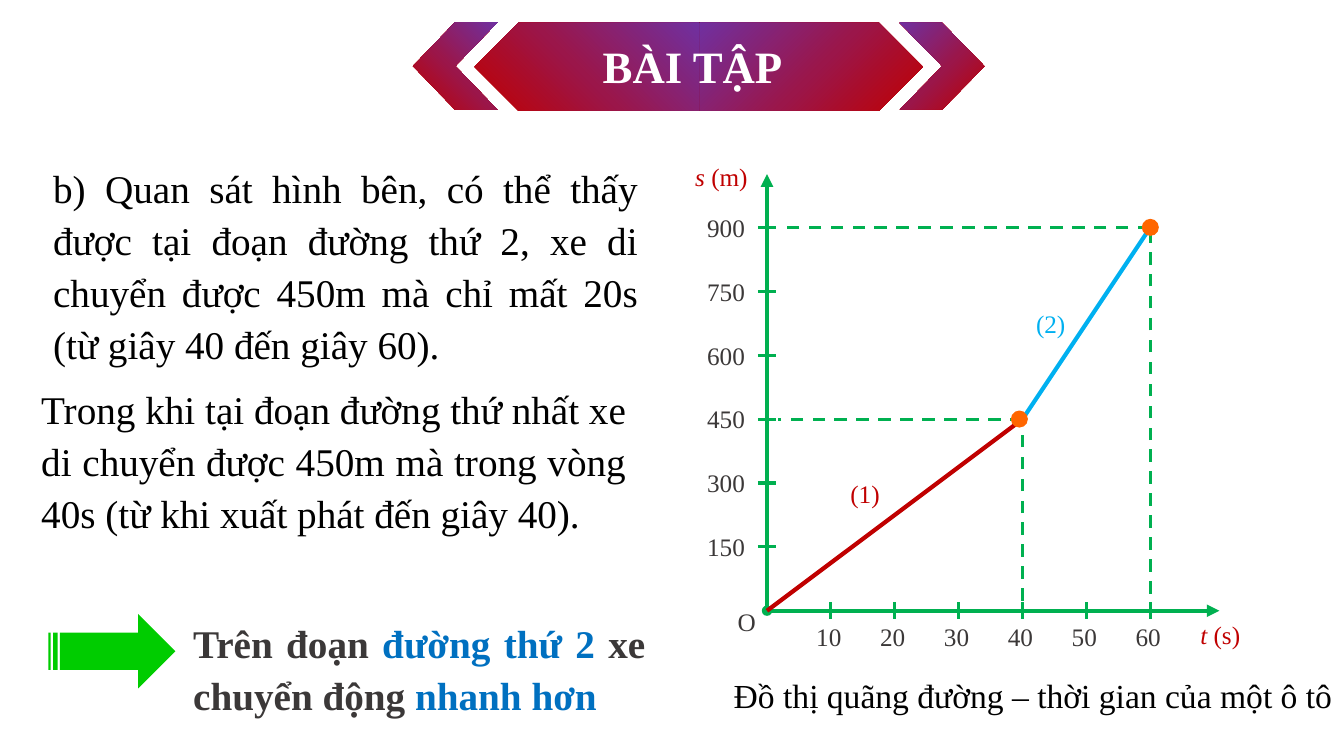
from pptx import Presentation
from pptx.dml.color import RGBColor
from pptx.enum.dml import MSO_LINE
from pptx.enum.shapes import MSO_CONNECTOR, MSO_SHAPE
from pptx.enum.text import PP_ALIGN
from pptx.oxml.ns import qn
from pptx.util import Cm, Pt
from copy import deepcopy
from lxml.etree import SubElement

FONT = "Times New Roman"
RED, GREEN, SKY, ORANGE = "C00000", "00B050", "00B0F0", "FF6600"
BLUE, GREY, BLACK, WHITE = "0070C0", "3B3838", "000000", "FFFFFF"
LIME = "00CC00"
BLEND = [(0, RED), (0.47, "9B164A"), (1, "7030A0")]
LEFT, BASE, STEP = 19.33, 15.39, 1.61


def rgb(code):
    """Turn a hex string into a colour."""
    return RGBColor.from_string(code)


def spot(time, dist):
    """Give the place of a time in s and a distance in m on the graph."""
    return LEFT + STEP * time / 10, BASE - STEP * dist / 150


def text(slide, box, *runs, size=18, color=GREY, bold=False,
         align=PP_ALIGN.LEFT, space=None):
    """Add a text box; a run is a string or (string, colour, italic)."""
    frame = slide.shapes.add_textbox(*map(Cm, box)).text_frame
    frame.word_wrap = True
    para = frame.paragraphs[0]
    para.alignment = align
    para.line_spacing = space
    for item in runs:
        words, tint, slant = (item, color, False) if isinstance(item, str) else item
        run = para.add_run()
        run.text = words
        font = run.font
        font.name, font.size = FONT, Pt(size)
        font.bold, font.italic = bold, slant
        font.color.rgb = rgb(tint)


def shape(slide, kind, box, color=None):
    """Add a plain shape without outline or shadow."""
    item = slide.shapes.add_shape(kind, *map(Cm, box))
    item.shadow.inherit = False
    item.line.fill.background()
    if color:
        item.fill.solid()
        item.fill.fore_color.rgb = rgb(color)
    return item


def badge(slide, kind, box, flip=False):
    """Add a blended part of the title banner."""
    item = shape(slide, kind, box)
    item.fill.gradient()
    item.fill.gradient_angle = 135
    stops = item._element.spPr.find(".//" + qn("a:gsLst"))
    stops.insert(1, deepcopy(stops[0]))
    for stop, (place, color) in zip(item.fill.gradient_stops, BLEND):
        stop.position = place
        stop.color.rgb = rgb(color)
    if flip:
        item._element.spPr.find(qn("a:xfrm")).set("flipH", "1")


def dot(slide, x, y, size, color):
    """Add a round mark centred on a point."""
    shape(slide, MSO_SHAPE.OVAL, (x - size / 2, y - size / 2, size, size), color)


def line(slide, start, end, color=GREEN, width=2.25, dash=False, arrow=False):
    """Add a straight line, dashed or with an arrowhead if asked."""
    item = slide.shapes.add_connector(
        MSO_CONNECTOR.STRAIGHT, *map(Cm, (*start, *end)))
    item.line.color.rgb = rgb(color)
    item.line.width = Pt(width)
    if dash:
        item.line.dash_style = MSO_LINE.DASH
    part = item._element.spPr
    if arrow:
        SubElement(part.find(qn("a:ln")), qn("a:tailEnd"), type="triangle")
    SubElement(part, qn("a:effectLst"))


def banner(slide):
    """Draw the title banner."""
    badge(slide, MSO_SHAPE.CHEVRON, (22.68, 0.58, 2.13, 2.18))
    badge(slide, MSO_SHAPE.CHEVRON, (10.41, 0.56, 2.13, 2.21), flip=True)
    badge(slide, MSO_SHAPE.PENTAGON, (17.6, 0.58, 5.66, 2.21))
    badge(slide, MSO_SHAPE.PENTAGON, (11.96, 0.58, 5.66, 2.21), flip=True)
    text(slide, (14.94, 0.86, 5.36, 1.63), "BÀI TẬP",
         size=32, color=WHITE, bold=True)


def axes(slide):
    """Draw both axes with their ticks and labels."""
    zero = spot(0, 0)
    line(slide, zero, (30.73, BASE), width=3, arrow=True)
    line(slide, zero, (LEFT, 4.39), width=3, arrow=True)
    dot(slide, *zero, 0.26, GREEN)
    for i in range(1, 7):
        x, y = spot(10 * i, 150 * i)
        line(slide, (x, BASE - 0.22), (x, BASE + 0.22))
        text(slide, (x - 0.62, 15.52, 1.6, 1.02), str(10 * i))
        line(slide, (LEFT - 0.23, y), (LEFT + 0.23, y))
        text(slide, (17.57, y - 0.51, 1.8, 1.02), str(150 * i))
    text(slide, (18.34, 15.16, 0.84, 1.02), "O")
    text(slide, (17.27, 3.94, 2.29, 1.02), ("s ", RED, True), "(m)", color=RED)
    text(slide, (30, 15.47, 1.85, 1.02), ("t ", RED, True), "(s)", color=RED)


def graph(slide):
    """Draw the two legs of the trip and their guides."""
    axes(slide)
    bend, goal = spot(40, 450), spot(60, 900)
    line(slide, spot(0, 0), bend, RED, 3)
    for (x, y), low, near in ((bend, 15.14, 19.61), (goal, 14.96, 19.79)):
        line(slide, (x, low), (x, y), dash=True)
        line(slide, (x, y), (near, y), dash=True)
    line(slide, bend, goal, SKY, 3)
    dot(slide, *goal, 0.43, ORANGE)
    dot(slide, bend[0] - 0.08, bend[1], 0.43, ORANGE)
    text(slide, (21.18, 11.94, 1.6, 1.02), "(1)", color=RED)
    text(slide, (25.86, 7.65, 1.6, 1.02), "(2)", color=SKY)
    text(slide, (18.24, 16.89, 15.93, 1.27),
         "Đồ thị quãng đường – thời gian của một ô tô", size=24, color=BLACK)


def notes(slide):
    """Write the answer and its conclusion."""
    style = dict(size=28, align=PP_ALIGN.JUSTIFY, space=1.1)
    text(slide, (1.09, 3.91, 15.24, 5.44),
         "b) Quan sát hình bên, có thể thấy được tại đoạn đường thứ 2, "
         "xe di chuyển được 450m mà chỉ mất 20s (từ giây 40 đến giây 60).",
         color=BLACK, **style)
    text(slide, (0.79, 9.47, 15.24, 5.44),
         "Trong khi tại đoạn đường thứ nhất xe di chuyển được 450m mà "
         "trong vòng 40s (từ khi xuất phát đến giây 40).",
         color=BLACK, **style)
    shape(slide, MSO_SHAPE.STRIPED_RIGHT_ARROW, (1.22, 15.47, 3.2, 1.88), LIME)
    text(slide, (4.62, 15.37, 11.89, 2.79), "Trên đoạn ",
         ("đường thứ 2 ", BLUE, False), "xe chuyển động ",
         ("nhanh hơn", BLUE, False), bold=True, **style)


def main():
    """Build and save the slide."""
    deck = Presentation()
    deck.slide_width, deck.slide_height = Cm(33.87), Cm(19.05)
    slide = deck.slides.add_slide(deck.slide_layouts[6])
    banner(slide)
    graph(slide)
    notes(slide)
    deck.save("out.pptx")


if __name__ == "__main__":
    main()
